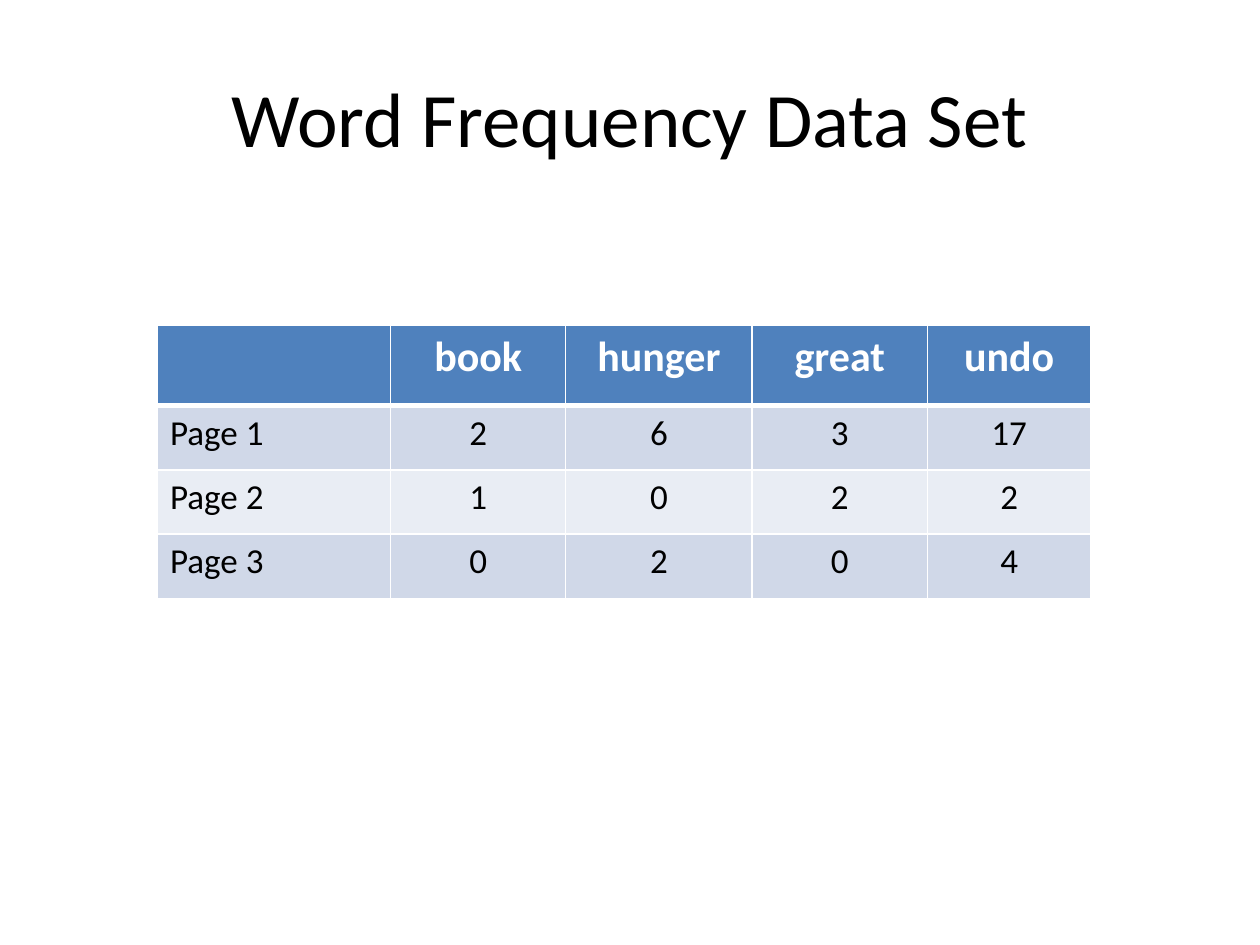
from lxml import etree
from pptx import Presentation
from pptx.dml.color import RGBColor
from pptx.enum.text import MSO_ANCHOR, PP_ALIGN
from pptx.oxml.ns import qn
from pptx.util import Inches, Pt

LEFT, CENTER = PP_ALIGN.LEFT, PP_ALIGN.CENTER
MIDDLE = MSO_ANCHOR.MIDDLE

BLACK = RGBColor(0x00, 0x00, 0x00)
WHITE = RGBColor(0xFF, 0xFF, 0xFF)
HEADER_BLUE = RGBColor(0x4F, 0x81, 0xBD)
BAND_DARK = RGBColor(0xD0, 0xD8, 0xE8)
BAND_LIGHT = RGBColor(0xE9, 0xED, 0xF4)

FONT = "Calibri"
THIN, THICK = 1, 3
COLUMN_WIDTHS = [1.85, 1.39, 1.48, 1.39, 1.3]
ROW_HEIGHTS = [0.64, 0.51, 0.51, 0.51]
FREQUENCIES = [
    ["", "book", "hunger", "great", "undo"],
    ["Page 1", "2", "6", "3", "17"],
    ["Page 2", "1", "0", "2", "2"],
    ["Page 3", "0", "2", "0", "4"],
]


def write_text(frame, text, size=20, color=BLACK, bold=False, align=CENTER):
    """Write one formatted paragraph into a text frame."""
    paragraph = frame.paragraphs[0]
    paragraph.alignment = align
    if not text:
        return
    run = paragraph.add_run()
    run.text = text
    run.font.name = FONT
    run.font.size = Pt(size)
    run.font.bold = bold
    run.font.color.rgb = color


def set_borders(cell, top, bottom):
    """Draw white borders around a cell, with the given top and bottom widths."""
    properties = cell._tc.get_or_add_tcPr()
    widths = {"a:lnL": THIN, "a:lnR": THIN, "a:lnT": top, "a:lnB": bottom}
    for side, width in widths.items():
        line = etree.SubElement(properties, qn(side), w=str(Pt(width)))
        fill = etree.SubElement(line, qn("a:solidFill"))
        etree.SubElement(fill, qn("a:srgbClr"), val=str(WHITE))


def add_title(slide, text):
    """Add the centred slide title."""
    title = slide.shapes.add_textbox(Inches(0.5), Inches(0.3), Inches(9), Inches(1.25))
    title.text_frame.word_wrap = True
    title.text_frame.vertical_anchor = MIDDLE
    write_text(title.text_frame, text, size=44)


def fill_cell(cell, text, row, column):
    """Fill and format one cell according to its place in the table."""
    set_borders(cell, top=THICK if row == 1 else THIN, bottom=THICK if row == 0 else THIN)
    cell.fill.solid()
    if row == 0:
        cell.fill.fore_color.rgb = HEADER_BLUE
        write_text(cell.text_frame, text, size=24, color=WHITE, bold=True)
    else:
        cell.fill.fore_color.rgb = BAND_DARK if row % 2 else BAND_LIGHT
        write_text(cell.text_frame, text, align=CENTER if column else LEFT)


def add_frequency_table(slide):
    """Add the table of word counts per page."""
    table = slide.shapes.add_table(
        len(ROW_HEIGHTS), len(COLUMN_WIDTHS), Inches(1.25), Inches(2.58),
        Inches(sum(COLUMN_WIDTHS)), Inches(sum(ROW_HEIGHTS)),
    ).table
    for column, width in zip(table.columns, COLUMN_WIDTHS):
        column.width = Inches(width)
    for row, height in zip(table.rows, ROW_HEIGHTS):
        row.height = Inches(height)
    for row, values in enumerate(FREQUENCIES):
        for column, value in enumerate(values):
            fill_cell(table.cell(row, column), value, row, column)


def main():
    """Build the slide and save it."""
    presentation = Presentation()
    presentation.slide_width = Inches(10)
    presentation.slide_height = Inches(7.5)
    slide = presentation.slides.add_slide(presentation.slide_layouts[6])
    add_title(slide, "Word Frequency Data Set")
    add_frequency_table(slide)
    presentation.save("out.pptx")


if __name__ == "__main__":
    main()
